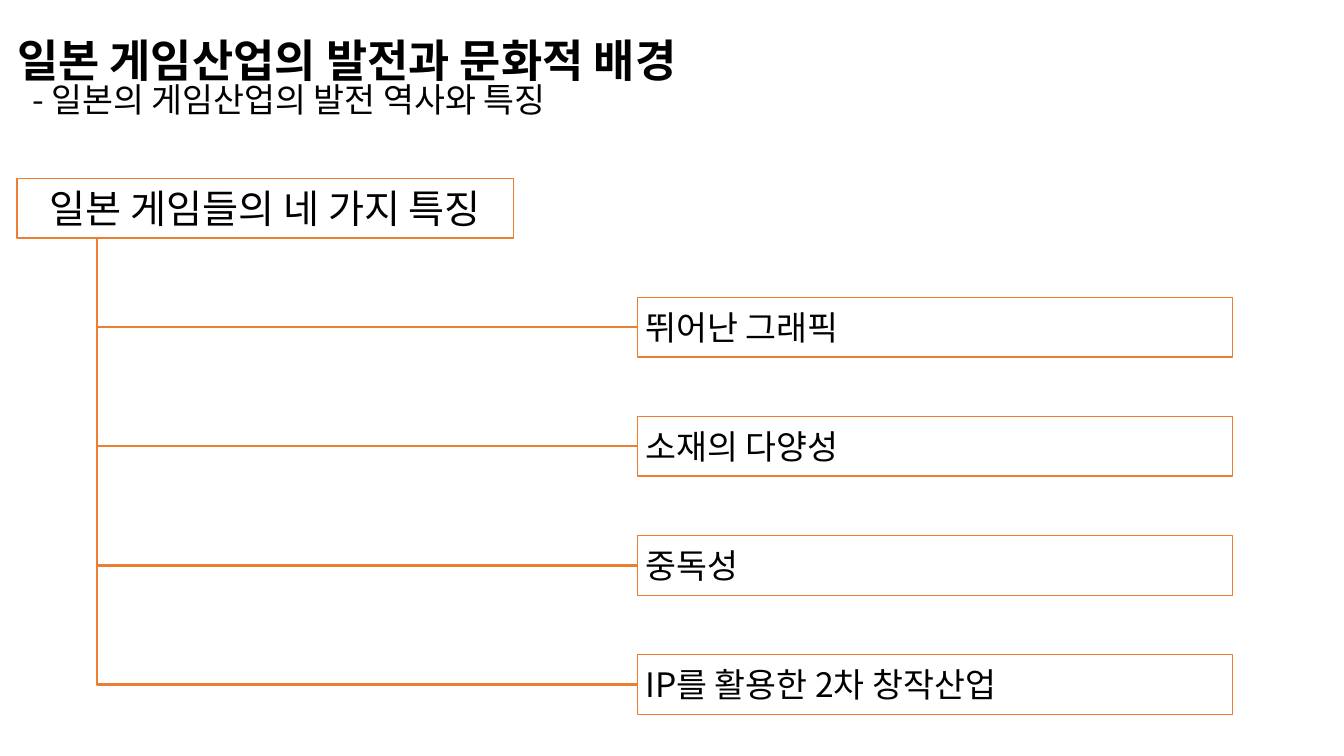
from dataclasses import dataclass

from lxml.etree import SubElement
from pptx import Presentation
from pptx.dml.color import RGBColor
from pptx.enum.shapes import MSO_CONNECTOR as Link, MSO_SHAPE as Shape
from pptx.enum.text import MSO_ANCHOR as Anchor, PP_ALIGN as Align
from pptx.oxml.ns import qn
from pptx.util import Inches, Mm, Pt


@dataclass(frozen=True)
class Theme:
    font: str = "Noto Sans CJK KR"
    ink: RGBColor = RGBColor(0, 0, 0)
    paper: RGBColor = RGBColor(255, 255, 255)
    accent: RGBColor = RGBColor(0xED, 0x7D, 0x31)
    title: Pt = Pt(32)
    heading: Pt = Pt(28)
    body: Pt = Pt(24)
    border: Pt = Pt(1)
    branch: Pt = Pt(1.5)


THEME = Theme()
MARGIN = Inches(0.17)
TITLE = "일본 게임산업의 발전과 문화적 배경"
SUBTITLE = "- 일본의 게임산업의 발전 역사와 특징"
HEADING = "일본 게임들의 네 가지 특징"
FEATURES = ["뛰어난 그래픽", "소재의 다양성", "중독성", "IP를 활용한 2차 창작산업"]


def grid(column, row, columns, rows):
    """Turn cells of a 5 mm grid, starting at the left margin, into a box."""
    return (MARGIN + Mm(5 * column), Mm(5 * row), Mm(5 * columns), Mm(5 * rows))


def write(shape, text, size, align=Align.JUSTIFY, indent=0, bold=False):
    frame = shape.text_frame
    frame.word_wrap = True
    frame.vertical_anchor = Anchor.MIDDLE
    frame.margin_left = Inches(indent)
    frame.margin_top = frame.margin_right = frame.margin_bottom = 0
    para = frame.paragraphs[0]
    para.alignment = align
    span = para.add_run()
    span.text = text
    font = span.font
    font.name, font.size, font.bold = THEME.font, size, bold
    font.color.rgb = THEME.ink
    SubElement(font._element, qn("a:ea"), typeface=THEME.font)


def add_rectangle(page, box):
    shape = page.shapes.add_shape(Shape.RECTANGLE, *box)
    shape.shadow.inherit = False
    return shape


def add_header(page, box):
    left, top, width, height = box
    title = add_rectangle(page, (left, top, width, height * 4 // 5))
    title.fill.solid()
    title.fill.fore_color.rgb = THEME.paper
    title.line.fill.background()
    write(title, TITLE, THEME.title, bold=True)
    subtitle = page.shapes.add_textbox(left, top + height * 3 // 5, width, height * 2 // 5)
    write(subtitle, SUBTITLE, THEME.body, indent=0.15)


def add_frame(page, box):
    frame = add_rectangle(page, box)
    frame.fill.background()
    frame.line.color.rgb = THEME.accent
    frame.line.width = THEME.border
    return frame


def add_branch(page, start, end):
    """Draw a line down from start, then right to end."""
    run, drop = end[0] - start[0], end[1] - start[1]
    left = (start[0] + end[0] - drop) // 2
    top = (start[1] + end[1] - run) // 2
    branch = page.shapes.add_connector(Link.ELBOW, left + drop, top, left, top + run)
    branch.line.color.rgb = THEME.accent
    branch.line.width = THEME.branch
    # A two-part elbow, turned a quarter to the left, leaves downwards.
    properties = branch._element.spPr
    properties.find(qn("a:xfrm")).set("rot", str(270 * 60000))
    properties.find(qn("a:prstGeom")).set("prst", "bentConnector2")
    SubElement(properties, qn("a:effectLst"))


def add_feature_tree(page, box):
    """Hang the features below the heading, on every second row of the box."""
    left, top, width, height = box
    row = height // (2 * len(FEATURES) + 1)
    heading = add_frame(page, (left, top, Mm(125), row))
    write(heading, HEADING, THEME.heading, Align.CENTER)
    start = (left + Mm(20), top + row)
    item_width = Mm(150)
    item_left = left + width - item_width
    for index, feature in enumerate(FEATURES, 1):
        item_top = top + 2 * index * row
        item = add_frame(page, (item_left, item_top, item_width, row))
        write(item, feature, THEME.body, indent=0.08)
        add_branch(page, start, (item_left, item_top + row // 2))


def main():
    deck = Presentation()
    deck.slide_width, deck.slide_height = Inches(13.33), Inches(7.5)
    page = deck.slides.add_slide(deck.slide_layouts[6])
    add_header(page, grid(0, 1, 66, 5))
    add_feature_tree(page, grid(0, 9, 61.25, 27))
    deck.save("out.pptx")


if __name__ == "__main__":
    main()
